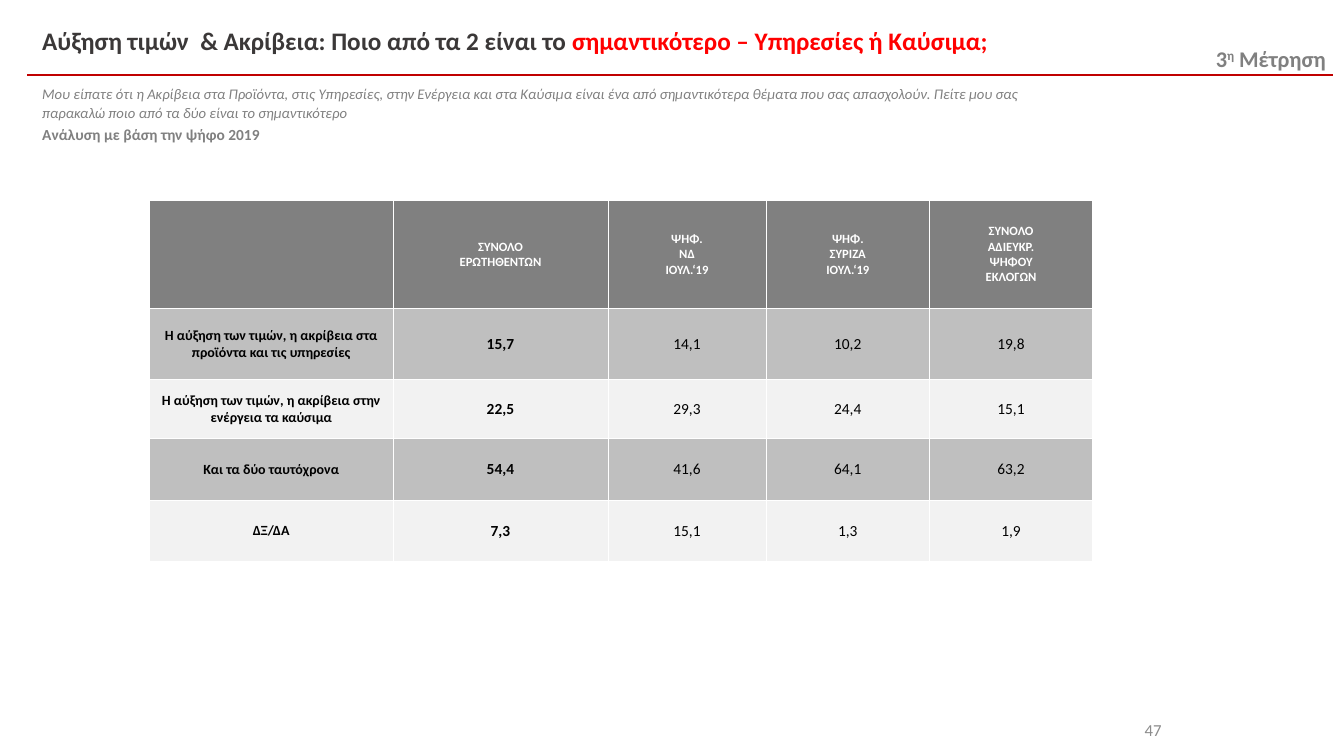
from lxml.etree import SubElement as Sub
from pptx import Presentation
from pptx.dml.color import RGBColor as RGB
from pptx.enum.shapes import MSO_CONNECTOR as LINK, MSO_SHAPE as SHAPE
from pptx.enum.text import MSO_ANCHOR as ANCHOR, MSO_AUTO_SIZE as AUTO, PP_ALIGN as ALIGN
from pptx.oxml.ns import qn
from pptx.util import Inches, Pt

WIDTH, HEIGHT = Inches(13.33), Inches(7.5)
FACE = "Calibri"

WHITE = RGB(0xFF, 0xFF, 0xFF)
BLACK = RGB(0, 0, 0)
INK = RGB(0x3B, 0x38, 0x38)
RED = RGB(0xFF, 0, 0)
DARK_RED = RGB(0xC0, 0, 0)
GREY = RGB(0x80, 0x80, 0x80)
PAGE_GREY = RGB(0x8C, 0x8C, 0x8C)
BANDS = [RGB(0xBF, 0xBF, 0xBF), RGB(0xF2, 0xF2, 0xF2)]

# Text formats
TITLE = {"size": Pt(18), "bold": True, "rgb": INK}
STRESS = {**TITLE, "rgb": RED}
ASKED = {"size": Pt(10.5), "italic": True, "rgb": GREY}
BASE = {"size": Pt(11), "bold": True, "rgb": GREY}
WAVE = {"size": Pt(16), "bold": True, "rgb": GREY}
PAGE = {"size": Pt(12), "rgb": PAGE_GREY}
HEAD = {"size": Pt(9), "bold": True, "rgb": WHITE}
LABEL = {"size": Pt(10), "bold": True, "rgb": BLACK}
TOTAL = {"size": Pt(11), "bold": True, "rgb": BLACK}
VALUE = {**TOTAL, "bold": False}

# Table content; sizes are percent of the slide
COLS = [18.15, 15.98, 11.78, 12.15, 12.15]
ROWS = [14.27, 9.33, 7.87, 8.13, 8.13]
HEADS = [
    [],
    ["ΣΥΝΟΛΟ", "ΕΡΩΤΗΘΕΝΤΩΝ"],
    ["ΨΗΦ.", "ΝΔ", "ΙΟΥΛ.‘19"],
    ["ΨΗΦ.", "ΣΥΡΙΖΑ", "ΙΟΥΛ.‘19"],
    ["ΣΥΝΟΛΟ", "ΑΔΙΕΥΚΡ.", "ΨΗΦΟΥ", "ΕΚΛΟΓΩΝ"],
]
DATA = [
    ["Η αύξηση των τιμών, η ακρίβεια στα προϊόντα και τις υπηρεσίες",
     "15,7", "14,1", "10,2", "19,8"],
    ["Η αύξηση των τιμών, η ακρίβεια στην ενέργεια τα καύσιμα",
     "22,5", "29,3", "24,4", "15,1"],
    ["Και τα δύο ταυτόχρονα", "54,4", "41,6", "64,1", "63,2"],
    ["ΔΞ/ΔΑ", "7,3", "15,1", "1,3", "1,9"],
]


def across(share):
    return round(WIDTH * share / 100)


def down(share):
    return round(HEIGHT * share / 100)


def place(left, top, width, height):
    return across(left), down(top), across(width), down(height)


def add_run(para, text, form):
    run = para.add_run()
    run.text = text
    run.font.name = FACE
    for key, value in form.items():
        if key == "rgb":
            run.font.color.rgb = value
        else:
            setattr(run.font, key, value)
    return run


def write(frame, paras):
    """Each item of paras: a list of (text, form) runs and a format dict."""
    for i, (runs, form) in enumerate(paras):
        para = frame.add_paragraph() if i else frame.paragraphs[0]
        for key, value in form.items():
            setattr(para, key, value)
        for text, look in runs:
            add_run(para, text, look)


def add_text(slide, box, paras, wrap=True):
    frame = slide.shapes.add_textbox(*box).text_frame
    frame.word_wrap = wrap
    frame.auto_size = AUTO.SHAPE_TO_FIT_TEXT
    write(frame, paras)
    return frame


def add_rule(slide, left, right, top):
    rule = slide.shapes.add_connector(
        LINK.STRAIGHT, across(left), down(top), across(right), down(top))
    rule.line.color.rgb = DARK_RED
    rule.line.width = Pt(1.5)
    Sub(rule._element.spPr, qn("a:effectLst"))


def add_page(slide, box, text):
    page = slide.shapes.add_shape(SHAPE.RECTANGLE, *box)
    page.shadow.inherit = False
    page.fill.solid()
    page.fill.fore_color.rgb = WHITE
    page.line.fill.background()
    page.text_frame.vertical_anchor = ANCHOR.MIDDLE
    write(page.text_frame, [([(text, PAGE)], {"alignment": ALIGN.RIGHT})])


def add_edges(cell):
    props = cell._tc.get_or_add_tcPr()
    for side in ("lnL", "lnR", "lnT", "lnB"):
        edge = Sub(props, qn(f"a:{side}"), w=str(Pt(0.5)))
        Sub(Sub(edge, qn("a:solidFill")), qn("a:srgbClr"), val=str(WHITE))


def fill_cell(cell, lines, form, fill, pads):
    add_edges(cell)
    cell.fill.solid()
    cell.fill.fore_color.rgb = fill
    cell.vertical_anchor = ANCHOR.MIDDLE
    for side, pad in pads.items():
        setattr(cell, f"margin_{side}", Inches(pad))
    write(cell.text_frame,
          [([(line, form)], {"alignment": ALIGN.CENTER}) for line in lines])


def add_grid(slide, left, top):
    box = place(left, top, sum(COLS), sum(ROWS))
    grid = slide.shapes.add_table(len(ROWS), len(COLS), *box).table
    for col, share in zip(grid.columns, COLS):
        col.width = across(share)
    for row, share in zip(grid.rows, ROWS):
        row.height = down(share)

    # Head row
    wide = {"left": 0.1, "right": 0.1, "top": 0.05, "bottom": 0.05}
    for c, lines in enumerate(HEADS):
        fill_cell(grid.cell(0, c), lines, HEAD, GREY, wide)

    # Banded body rows
    thin = {"left": 0.01, "right": 0.01, "top": 0.01, "bottom": 0}
    forms = [LABEL, TOTAL, VALUE, VALUE, VALUE]
    for r, texts in enumerate(DATA):
        for c, (text, form) in enumerate(zip(texts, forms)):
            fill_cell(grid.cell(r + 1, c), [text], form, BANDS[r % 2], thin)


def main():
    deck = Presentation()
    deck.slide_width, deck.slide_height = WIDTH, HEIGHT
    slide = deck.slides.add_slide(deck.slide_layouts[6])

    # Header rule and survey wave
    add_rule(slide, 2.03, 99.18, 9.87)
    wave = add_text(slide, place(89.72, 5.33, 10.28, 4.93),
                    [([("3", WAVE), ("η", WAVE), (" Μέτρηση", WAVE)], {})], wrap=False)
    wave.paragraphs[0].runs[1]._r.get_or_add_rPr().set("baseline", "30000")

    # Title, question asked and base
    add_text(slide, place(2.4, 2.27, 77.49, 18.13), [
        ([("Αύξηση τιμών  & Ακρίβεια: Ποιο από τα 2 είναι το ", TITLE),
          ("σημαντικότερο – Υπηρεσίες ή Καύσιμα;", STRESS)], {"line_spacing": 1.1}),
        ([("Μου είπατε ότι η Ακρίβεια στα Προϊόντα, στις Υπηρεσίες, στην Ενέργεια "
           "και στα Καύσιμα είναι ένα από σημαντικότερα θέματα που σας απασχολούν. "
           "Πείτε μου σας παρακαλώ ποιο από τα δύο είναι το σημαντικότερο", ASKED)],
         {"line_spacing": 1.1, "space_before": Pt(19.5)}),
        ([("Ανάλυση με βάση την ψήφο 2019", BASE)], {"line_spacing": 1.2}),
    ])

    # Page number and results
    add_page(slide, place(82.37, 93.87, 4.8, 5.33), "47")
    add_grid(slide, 11.1, 26.53)
    deck.save("out.pptx")


if __name__ == "__main__":
    main()
